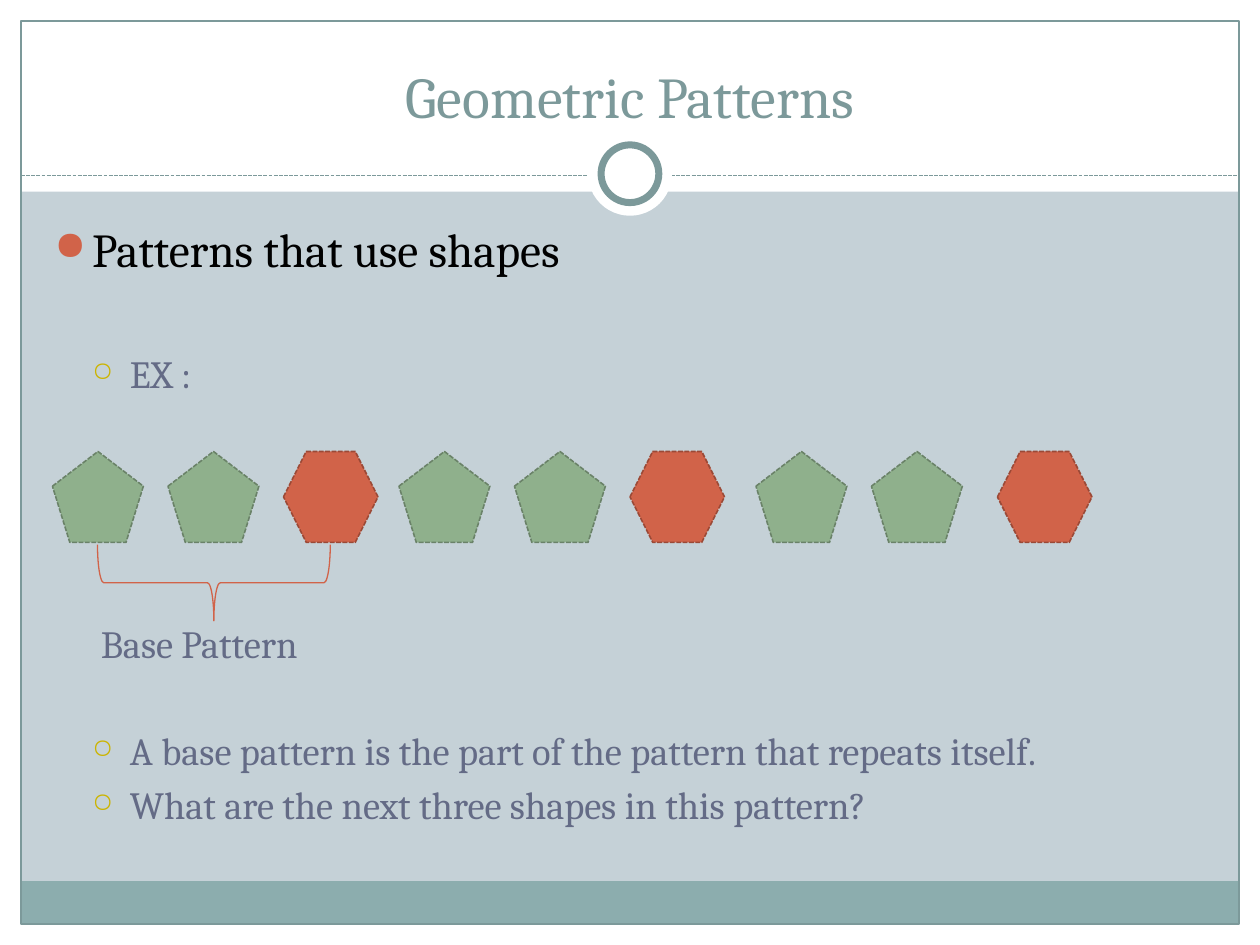
from lxml.etree import SubElement
from pptx import Presentation
from pptx.dml.color import RGBColor
from pptx.enum.dml import MSO_LINE
from pptx.enum.shapes import MSO_CONNECTOR, MSO_SHAPE
from pptx.enum.text import MSO_ANCHOR, PP_ALIGN
from pptx.oxml.ns import qn
from pptx.util import Pt

FONT = "Cambria"
WHITE, TEAL, RED, SLATE = "FFFFFF", "7C999A", "D16349", "646B86"
WIDTH, HEIGHT, MARGIN = 720, 540, 12
FRAME_WIDTH, FRAME_HEIGHT = WIDTH - 2 * MARGIN, HEIGHT - 2 * MARGIN

BANDS = [  # left, top, width, height, fill
    (0, HEIGHT - MARGIN, WIDTH, MARGIN, WHITE),
    (0, 0, WIDTH, 109.5, WHITE),
    (0, 0, MARGIN, HEIGHT, WHITE),
    (WIDTH - MARGIN, 0, MARGIN, HEIGHT, WHITE),
    (MARGIN, 503.5, FRAME_WIDTH, 24.5, "8CADAE"),
]
TITLE = "Geometric Patterns"
BULLETS = {  # level: character, colour, size in percent
    0: ("●", RED, 85),
    1: ("○", "CCB400", 70),
}
BODY = [  # text, bullet level, indent, size, colour, line height, space before
    ("Patterns that use shapes", 0, 21.6, 27, "000000", 34.5, 0),
    ("EX :", 1, 43.2, 22, SLATE, 30, 38.3),
    ("Base Pattern", None, 26.5, 22, SLATE, 30, 124.3),
    ("A base pattern is the part of the pattern that repeats itself.",
     1, 43.2, 22, SLATE, 30, 31),
    ("What are the next three shapes in this pattern?", 1, 43.2, 22, SLATE, 30, 0.9),
]
HANGING = 21.6
PENTAGON = (MSO_SHAPE.REGULAR_PENTAGON, 52, "8FB08C", "6A8268")
HEXAGON = (MSO_SHAPE.HEXAGON, 54, RED, "9B4936")
BASE_PATTERN = [PENTAGON, PENTAGON, HEXAGON]
PATTERN_LEFTS = [30, 96, 162, 228, 294, 360, 432, 498, 570]
PATTERN_TOP, PATTERN_HEIGHT = 258, 52


def color(value):
    return RGBColor.from_string(value)


def add_shape(slide, kind, box, fill=None, line=None, line_width=0.75):
    shape = slide.shapes.add_shape(kind, *map(Pt, box))
    shape.shadow.inherit = False
    if fill:
        shape.fill.solid()
        shape.fill.fore_color.rgb = color(fill)
    else:
        shape.fill.background()
    if line:
        shape.line.color.rgb = color(line)
        shape.line.width = Pt(line_width)
    else:
        shape.line.fill.background()
    return shape


def add_circle(slide, center_x, center_y, size, line=None, line_width=0.75):
    box = (center_x - size / 2, center_y - size / 2, size, size)
    return add_shape(slide, MSO_SHAPE.OVAL, box, WHITE, line, line_width)


def add_frame(slide):
    for *box, fill in BANDS:
        add_shape(slide, MSO_SHAPE.RECTANGLE, box, fill)
    add_shape(slide, MSO_SHAPE.RECTANGLE,
              (MARGIN, MARGIN, FRAME_WIDTH, FRAME_HEIGHT), line=TEAL)
    divider = slide.shapes.add_connector(
        MSO_CONNECTOR.STRAIGHT, Pt(MARGIN), Pt(100.5), Pt(WIDTH - MARGIN), Pt(100.5))
    divider.line.color.rgb = color(TEAL)
    divider.line.width = Pt(0.75)
    divider.line.dash_style = MSO_LINE.SQUARE_DOT
    SubElement(divider.line._get_or_add_ln().getparent(), qn("a:effectLst"))
    add_circle(slide, WIDTH / 2, 99.3, 48)
    add_circle(slide, WIDTH / 2, 99.3, 33, TEAL, 4)


def format_title(title):
    title.left, title.top, title.width, title.height = map(Pt, (24, 18, 672, 60))
    title._element.getparent().append(title._element)  # in front of the bands
    frame = title.text_frame
    frame.text = TITLE
    frame.vertical_anchor = MSO_ANCHOR.BOTTOM
    paragraph = frame.paragraphs[0]
    paragraph.alignment = PP_ALIGN.CENTER
    paragraph.font.name = FONT
    paragraph.font.size = Pt(33)
    paragraph.font.color.rgb = color(TEAL)


def set_indent(paragraph, indent, level):
    properties = paragraph._p.get_or_add_pPr()
    properties.set("marL", str(Pt(indent)))
    if level is None:
        return
    properties.set("indent", str(-Pt(HANGING)))
    character, bullet_color, percent = BULLETS[level]
    bullet = SubElement(properties, qn("a:buClr"))
    SubElement(bullet, qn("a:srgbClr"), val=bullet_color)
    SubElement(properties, qn("a:buSzPct"), val=str(percent * 1000))
    SubElement(properties, qn("a:buChar"), char=character)


def add_body(slide):
    frame = slide.shapes.add_textbox(Pt(24), Pt(120), Pt(670), Pt(384)).text_frame
    frame.word_wrap = True
    for index, (text, level, indent, size, text_color, height, before) in enumerate(BODY):
        paragraph = frame.add_paragraph() if index else frame.paragraphs[0]
        paragraph.text = text
        paragraph.level = 0 if level == 0 else 1
        paragraph.line_spacing = Pt(height)
        paragraph.space_before = Pt(before)
        set_indent(paragraph, indent, level)
        paragraph.font.name = FONT
        paragraph.font.size = Pt(size)
        paragraph.font.color.rgb = color(text_color)


def add_pattern(slide):
    for index, left in enumerate(PATTERN_LEFTS):
        kind, width, fill, line = BASE_PATTERN[index % len(BASE_PATTERN)]
        shape = add_shape(slide, kind, (left, PATTERN_TOP, width, PATTERN_HEIGHT),
                          fill, line, 0.9)
        shape.line.dash_style = MSO_LINE.SQUARE_DOT
    brace = add_shape(slide, MSO_SHAPE.LEFT_BRACE, (100.5, 266.5, 43.5, 133), line=RED)
    brace.rotation = 270


def main():
    presentation = Presentation()
    presentation.slide_width, presentation.slide_height = Pt(WIDTH), Pt(HEIGHT)
    slide = presentation.slides.add_slide(presentation.slide_layouts[5])
    slide.background.fill.solid()
    slide.background.fill.fore_color.rgb = color("C5D1D7")
    add_frame(slide)
    format_title(slide.shapes.title)
    add_body(slide)
    add_pattern(slide)
    presentation.save("out.pptx")


if __name__ == "__main__":
    main()
